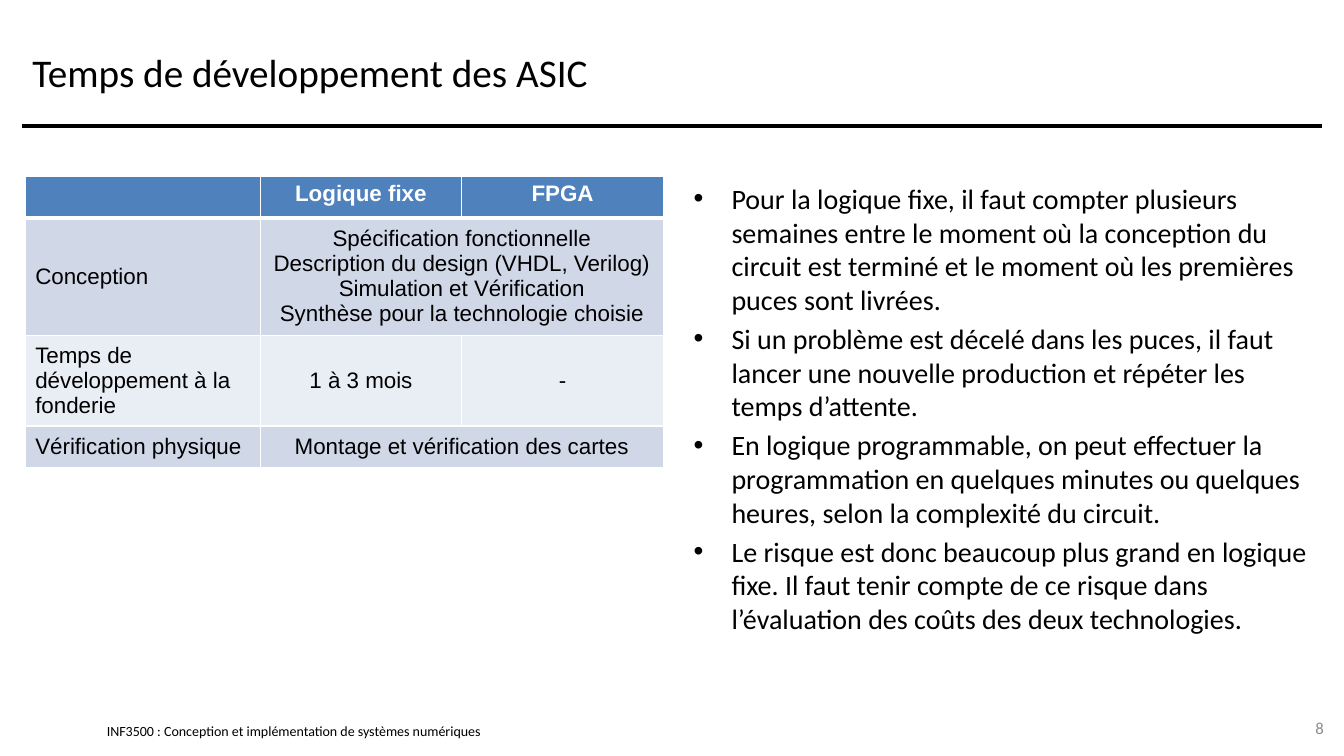
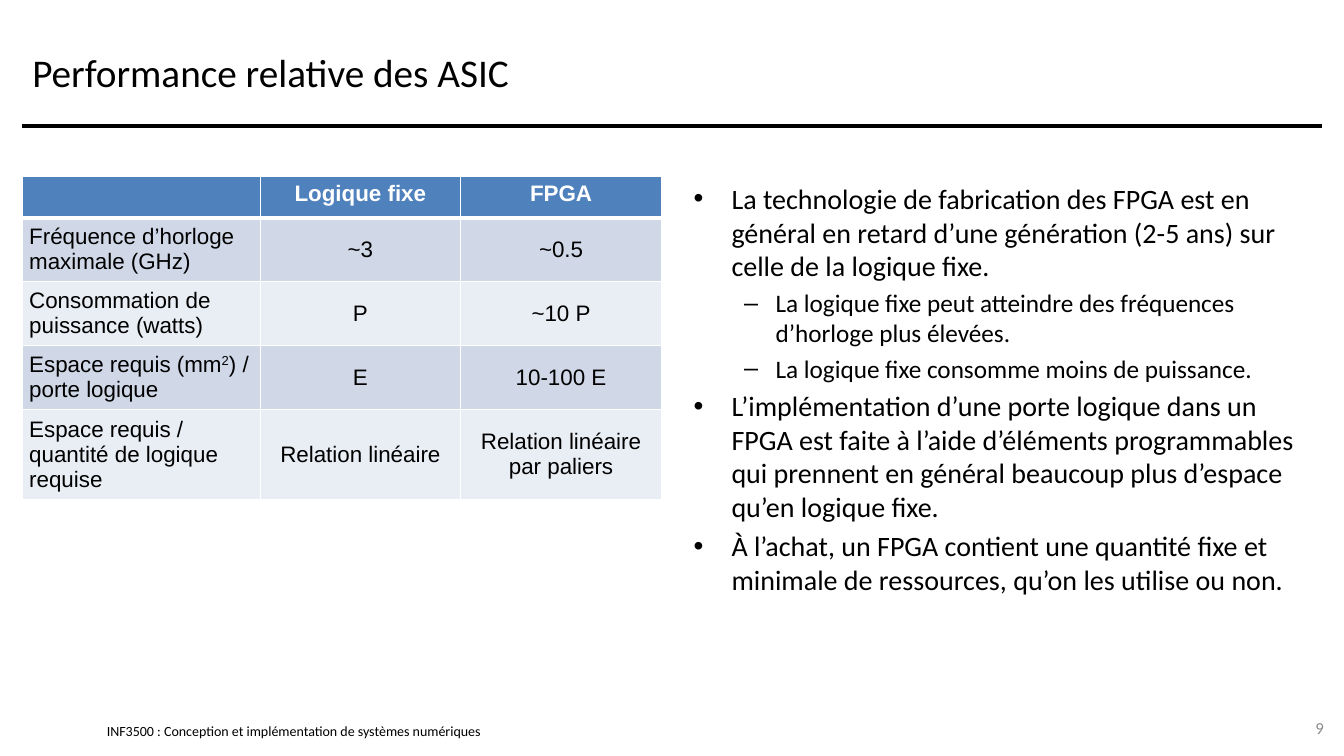
"""Build two course slides comparing fixed logic with FPGAs."""
from dataclasses import dataclass
from typing import Optional

from lxml import etree
from pptx import Presentation
from pptx import util as u
from pptx.dml.color import RGBColor
from pptx.enum import shapes, text
from pptx.oxml import ns

BLACK = RGBColor(0x00, 0x00, 0x00)
WHITE = RGBColor(0xFF, 0xFF, 0xFF)
GREY = RGBColor(0x8C, 0x8C, 0x8C)
HEADER_BLUE = RGBColor(0x4F, 0x81, 0xBD)
BAND_DARK = RGBColor(0xD0, 0xD8, 0xE8)
BAND_LIGHT = RGBColor(0xE9, 0xED, 0xF4)

TEXT_FONT = "Calibri"
TABLE_FONT = "Arial"
TABLE_SIZE = 16
BULLET_SIZES = (20, 18)
MARGIN = 0.22
CONTENT_TOP = 1.75
RULE_TOP = 1.25
RULE_WIDTH = 12.89
FOOTER = "INF3500 : Conception et implémentation de systèmes numériques"
HEADER = ("", "Logique fixe", "FPGA")


@dataclass(frozen=True)
class Row:
    """Table row: None extends the cell before it, ^ encloses a superscript, \\v breaks a line."""
    height: float
    cells: tuple[Optional[str], ...]


@dataclass(frozen=True)
class Grid:
    """Table position, column widths, side inset and rows below the header."""
    left: float
    columns: tuple[float, ...]
    inset: float
    rows: tuple[Row, ...]


@dataclass(frozen=True)
class Bullet:
    """Bulleted sentence with its outline level."""
    words: str
    level: int = 0


@dataclass(frozen=True)
class Page:
    """Content of one slide."""
    number: int
    title: str
    grid: Grid
    bullets: tuple[Bullet, ...]


PAGES = (
    Page(
        8,
        "Temps de développement des ASIC",
        Grid(0.25, (2.33, 2, 2), 0.1, (
            Row(1.08, ("Conception",
                       "Spécification fonctionnelle\n"
                       "Description du design (VHDL, Verilog)\n"
                       "Simulation et Vérification\n"
                       "Synthèse pour la technologie choisie", None)),
            Row(0.84, ("Temps de développement à la fonderie", "1 à 3 mois", "-")),
            Row(0.41, ("Vérification physique", "Montage et vérification des cartes", None)),
        )),
        (
            Bullet("Pour la logique fixe, il faut compter plusieurs semaines entre le moment où la "
                   "conception du circuit est terminé et le moment où les premières puces sont livrées."),
            Bullet("Si un problème est décelé dans les puces, il faut lancer une nouvelle production "
                   "et répéter les temps d’attente."),
            Bullet("En logique programmable, on peut effectuer la programmation en quelques minutes "
                   "ou quelques heures, selon la complexité du circuit."),
            Bullet("Le risque est donc beaucoup plus grand en logique fixe. Il faut tenir compte de "
                   "ce risque dans l’évaluation des coûts des deux technologies."),
        ),
    ),
    Page(
        9,
        "Performance relative des ASIC",
        Grid(MARGIN, (2.36, 1.99, 1.99), 0.07, (
            Row(0.59, ("Fréquence d’horloge maximale (GHz)", "~3", "~0.5")),
            Row(0.59, ("Consommation de puissance (watts)", "P", "~10 P")),
            Row(0.59, ("Espace requis (mm^2^) / porte logique", "E", "10-100 E")),
            Row(0.84, ("Espace requis / quantité de logique requise", "Relation linéaire",
                       "Relation linéaire\vpar paliers")),
        )),
        (
            Bullet("La technologie de fabrication des FPGA est en général en retard d’une génération "
                   "(2-5 ans) sur celle de la logique fixe."),
            Bullet("La logique fixe peut atteindre des fréquences d’horloge plus élevées.", 1),
            Bullet("La logique fixe consomme moins de puissance.", 1),
            Bullet("L’implémentation d’une porte logique dans un FPGA est faite à l’aide d’éléments "
                   "programmables qui prennent en général beaucoup plus d’espace qu’en logique fixe."),
            Bullet("À l’achat, un FPGA contient une quantité fixe et minimale de ressources, "
                   "qu’on les utilise ou non."),
        ),
    ),
)


def place(shape, left: float, top: float, width: float, height: float) -> None:
    """Move and size a shape in inches."""
    shape.left, shape.top = u.Inches(left), u.Inches(top)
    shape.width, shape.height = u.Inches(width), u.Inches(height)


def add_run(paragraph, words: str, size: float, color: RGBColor = BLACK,
            font: str = TEXT_FONT, bold: bool = False):
    """Append a formatted run to a paragraph."""
    run = paragraph.add_run()
    run.text = words
    run.font.name, run.font.size, run.font.bold = font, u.Pt(size), bold
    run.font.color.rgb = color
    return run


def add_label(slide, box: tuple[float, float, float, float], words: str, size: float,
              color: RGBColor, align: text.PP_ALIGN, inset: Optional[float] = None) -> None:
    """Add a one-line text box centred vertically."""
    frame = slide.shapes.add_textbox(*map(u.Inches, box)).text_frame
    frame.word_wrap = True
    frame.vertical_anchor = text.MSO_ANCHOR.MIDDLE
    if inset is not None:
        frame.margin_left = frame.margin_right = u.Inches(inset)
        frame.margin_top = frame.margin_bottom = u.Inches(inset)
    frame.paragraphs[0].alignment = align
    add_run(frame.paragraphs[0], words, size, color)


def add_frame(slide, page: Page) -> None:
    """Add the title, rule, footer and page number shared by all slides."""
    add_label(slide, (1.06, 7.17, 5.11, 0.17), FOOTER, 10, BLACK, text.PP_ALIGN.LEFT, 0)
    rule = slide.shapes.add_connector(
        shapes.MSO_CONNECTOR.STRAIGHT, u.Inches(MARGIN), u.Inches(RULE_TOP),
        u.Inches(MARGIN + RULE_WIDTH), u.Inches(RULE_TOP))
    rule.line.color.rgb, rule.line.width = BLACK, u.Pt(3)
    etree.SubElement(rule.element.spPr, ns.qn("a:effectLst"))

    title = slide.shapes.title
    place(title, MARGIN, 0.17, RULE_WIDTH, 1.08)
    title.text_frame.auto_size = text.MSO_AUTO_SIZE.NONE
    title.text_frame.vertical_anchor = text.MSO_ANCHOR.MIDDLE
    paragraph = title.text_frame.paragraphs[0]
    paragraph.alignment = text.PP_ALIGN.LEFT
    add_run(paragraph, page.title, 28)
    add_label(slide, (12.56, 7.02, 0.67, 0.4), str(page.number), 12, GREY, text.PP_ALIGN.RIGHT)


def set_borders(cell, top: float, bottom: float) -> None:
    """Give a cell white borders, with top and bottom widths in points."""
    properties = cell._tc.get_or_add_tcPr()
    for tag, points in (("lnL", 1), ("lnR", 1), ("lnT", top), ("lnB", bottom)):
        line = etree.SubElement(properties, ns.qn(f"a:{tag}"), w=str(u.Pt(points)))
        fill = etree.SubElement(line, ns.qn("a:solidFill"))
        etree.SubElement(fill, ns.qn("a:srgbClr"), val=str(WHITE))


def fill_cell(cell, words: str, is_header: bool, align: text.PP_ALIGN, inset: float) -> None:
    """Write the paragraphs, line breaks and superscripts of a cell."""
    cell.margin_left = cell.margin_right = u.Inches(inset)
    cell.margin_top = cell.margin_bottom = u.Inches(0.05)
    cell.vertical_anchor = text.MSO_ANCHOR.TOP if is_header else text.MSO_ANCHOR.MIDDLE
    color = WHITE if is_header else BLACK
    frame = cell.text_frame
    for index, block in enumerate(words.split("\n") if words else ()):
        paragraph = frame.add_paragraph() if index else frame.paragraphs[0]
        paragraph.alignment = align
        for line_index, line in enumerate(block.split("\v")):
            if line_index:
                paragraph.add_line_break()
            for part_index, part in enumerate(line.split("^")):
                run = add_run(paragraph, part, TABLE_SIZE, color, TABLE_FONT, is_header)
                if part_index % 2:
                    run._r.get_or_add_rPr().set("baseline", "30000")


def add_grid(slide, grid: Grid) -> None:
    """Add the comparison table with its blue header and banded rows."""
    rows = (Row(0.41, HEADER), *grid.rows)
    table = slide.shapes.add_table(
        len(rows), len(grid.columns), u.Inches(grid.left), u.Inches(CONTENT_TOP),
        u.Inches(sum(grid.columns)), u.Inches(sum(row.height for row in rows))).table
    table.horz_banding = False
    for column, width in zip(table.columns, grid.columns):
        column.width = u.Inches(width)
    for row_index, row in enumerate(rows):
        table.rows[row_index].height = u.Inches(row.height)
        is_header = row_index == 0
        band = HEADER_BLUE if is_header else BAND_DARK if row_index % 2 else BAND_LIGHT
        for column_index, words in enumerate(row.cells):
            cell = table.cell(row_index, column_index)
            set_borders(cell, 3 if row_index == 1 else 1, 3 if is_header else 1)
            cell.fill.solid()
            cell.fill.fore_color.rgb = band
            if words is None:
                table.cell(row_index, column_index - 1).merge(cell)
                continue
            align = text.PP_ALIGN.CENTER if column_index else text.PP_ALIGN.LEFT
            fill_cell(cell, words, is_header, align, grid.inset)


def add_bullets(slide, bullets: tuple[Bullet, ...]) -> None:
    """Fill the body placeholder with the bulleted list."""
    body = slide.placeholders[1]
    place(body, 6.78, CONTENT_TOP, 6.33, 5.08)
    frame = body.text_frame
    frame.auto_size = text.MSO_AUTO_SIZE.NONE
    for index, bullet in enumerate(bullets):
        paragraph = frame.add_paragraph() if index else frame.paragraphs[0]
        size = BULLET_SIZES[bullet.level]
        paragraph.level = bullet.level
        paragraph.space_before = u.Pt(0.2 * size if index else 0)
        add_run(paragraph, bullet.words, size)


def main() -> None:
    """Build and save the presentation."""
    presentation = Presentation()
    presentation.slide_width, presentation.slide_height = u.Inches(13.33), u.Inches(7.5)
    for page in PAGES:
        slide = presentation.slides.add_slide(presentation.slide_layouts[1])
        add_frame(slide, page)
        add_grid(slide, page.grid)
        add_bullets(slide, page.bullets)
    presentation.save("out.pptx")


if __name__ == "__main__":
    main()
